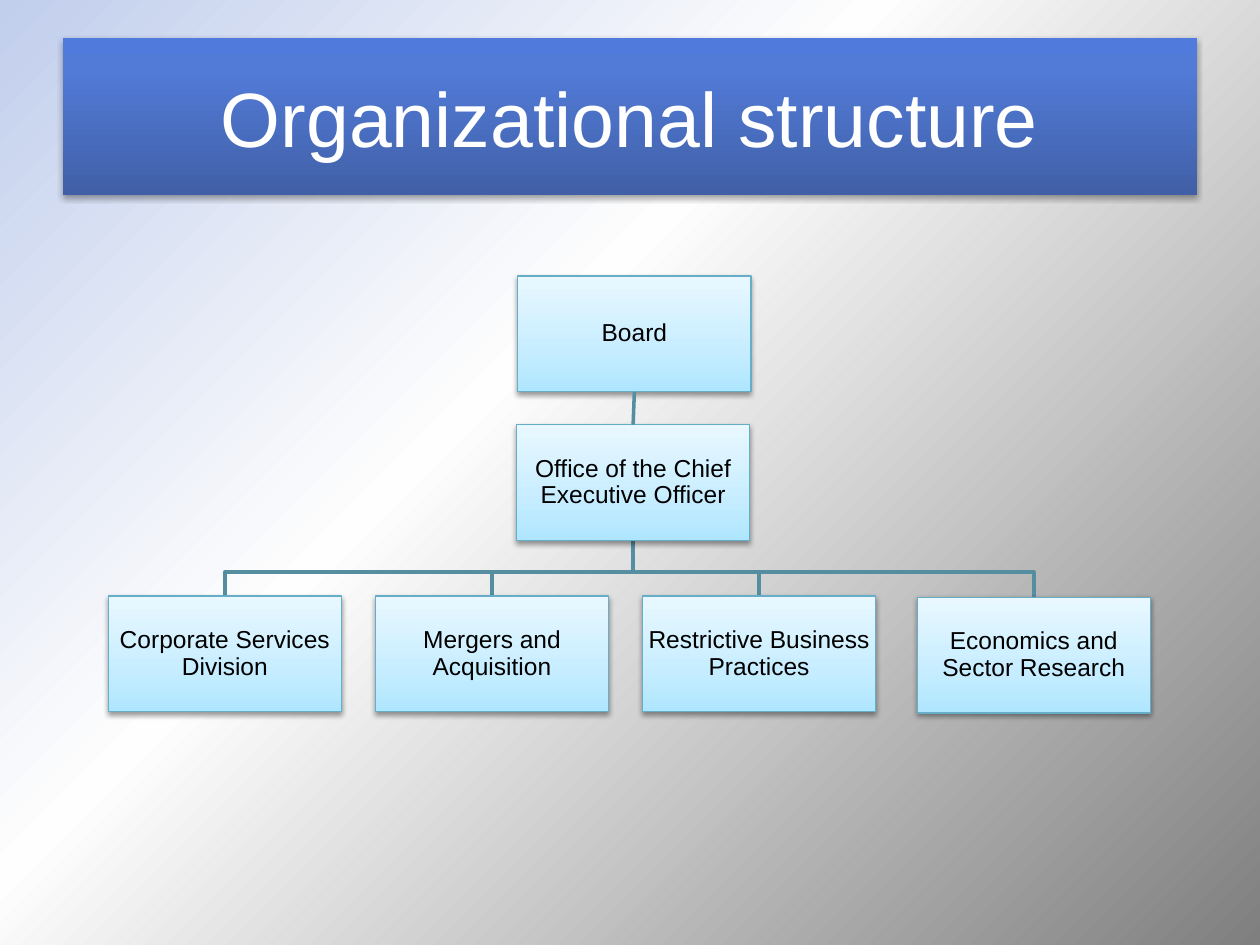
from dataclasses import dataclass

from lxml import etree
from pptx import Presentation
from pptx import util as u
from pptx.dml.color import RGBColor
from pptx.enum import shapes, text
from pptx.oxml import parse_xml
from pptx.oxml.ns import nsdecls, qn


@dataclass(frozen=True)
class Theme:
    font: str = "Arial"
    head: int = 44
    body: int = 14
    white: str = "FFFFFF"
    ink: str = "000000"
    edge: str = "66AEC7"
    link: str = "568EA1"
    page: tuple = ((0, "C1CEEC"), (40, "FEFEFE"), (100, "7F7F7F"))
    banner: tuple = ((0, "405FA6"), (80, "527BD8"), (100, "507ADC"))
    card: tuple = ((0, "AEE6FF"), (35, "C6EDFF"), (100, "E9F8FF"))


T = Theme()
WIDE, HIGH = 1.85, 0.92
LEFT, STEP = 0.86, 2.12
ROWS = 2.19, 3.37, 4.73
BUS = 4.54
BOARD = "Board", 4.11, ROWS[0]
CHIEF = "Office of the Chief Executive Officer", 4.1, ROWS[1]
UNITS = ("Corporate Services Division", "Mergers and Acquisition",
         "Restrictive Business Practices", "Economics and Sector Research")
NUDGE = {3: (0.06, 0.01)}  # the last unit sits slightly off the grid


def assign(obj, **vals):
    for key, val in vals.items():
        setattr(obj, key, val)


def blend(fill, root, stops, angle):
    """Fill with a gradient; the angle runs clockwise in degrees."""
    fill.solid()
    marks = "".join(
        f'<a:gs pos="{at * 1000}"><a:srgbClr val="{hue}"/></a:gs>'
        for at, hue in stops)
    grad = parse_xml(
        f'<a:gradFill {nsdecls("a")} rotWithShape="1"><a:gsLst>{marks}</a:gsLst>'
        f'<a:lin ang="{angle * 60000}" scaled="0"/></a:gradFill>')
    root.replace(root.find(qn("a:solidFill")), grad)


def shade(shape, alpha, drop):
    """Cast a soft shadow straight down by drop points."""
    shape.shadow.inherit = False
    shape.element.spPr.find(qn("a:effectLst")).append(parse_xml(
        f'<a:outerShdw {nsdecls("a")} blurRad="{u.Pt(3.1)}" dist="{u.Pt(drop)}" '
        f'dir="5400000" rotWithShape="0"><a:srgbClr val="{T.ink}">'
        f'<a:alpha val="{alpha * 1000}"/></a:srgbClr></a:outerShdw>'))


def stroke(line, hue, width):
    line.color.rgb = RGBColor.from_string(hue)
    line.width = u.Pt(width)


def write(shape, words, size, hue):
    frame = shape.text_frame
    assign(frame, text=words, word_wrap=True,
           vertical_anchor=text.MSO_ANCHOR.MIDDLE)
    para = frame.paragraphs[0]
    para.alignment = text.PP_ALIGN.CENTER
    assign(para.runs[0].font, name=T.font, size=u.Pt(size))
    para.runs[0].font.color.rgb = RGBColor.from_string(hue)
    return frame


def add_title(slide, words):
    title = slide.shapes.title
    assign(title, left=u.Inches(0.5), top=u.Inches(0.3),
           width=u.Inches(9), height=u.Inches(1.25))
    blend(title.fill, title.element.spPr, T.banner, 270)
    shade(title, 35, 1.8)
    write(title, words, T.head, T.white)


def add_card(slide, words, left, top):
    card = slide.shapes.add_shape(
        shapes.MSO_SHAPE.RECTANGLE, *map(u.Inches, (left, top, WIDE, HIGH)))
    blend(card.fill, card.element.spPr, T.card, 270)
    stroke(card.line, T.edge, 0.75)
    shade(card, 38, 1.6)
    frame = write(card, words, T.body, T.ink)
    sides = ("left", "right", "top", "bottom")
    assign(frame, **{f"margin_{side}": u.Inches(0.01) for side in sides})
    frame.paragraphs[0].line_spacing = 0.9
    return card


def add_branch(slide, left, top):
    """Draw the bent line from the chief's card down to a unit's card."""
    start = CHIEF[1] + WIDE / 2
    end = left + WIDE / 2
    points = [(start, CHIEF[2] + HIGH), (start, BUS), (end, BUS), (end, top)]
    points = [tuple(map(u.Inches, point)) for point in points]
    build = slide.shapes.build_freeform(*points[0])
    build.add_line_segments(points[1:], close=False)
    branch = build.convert_to_shape()
    branch.fill.background()
    branch.shadow.inherit = False
    stroke(branch.line, T.link, 2)


def add_link(slide, upper, lower):
    link = slide.shapes.add_connector(
        shapes.MSO_CONNECTOR.STRAIGHT, 0, 0, 0, 0)
    link.begin_connect(upper, 2)
    link.end_connect(lower, 0)
    stroke(link.line, T.link, 2)
    etree.SubElement(link.element.spPr, qn("a:effectLst"))


def place(col):
    dx, dy = NUDGE.get(col, (0, 0))
    return LEFT + col * STEP + dx, ROWS[2] + dy


def main():
    deck = Presentation()
    assign(deck, slide_width=u.Inches(10), slide_height=u.Inches(7.5))
    slide = deck.slides.add_slide(deck.slide_layouts[5])
    fill = slide.background.fill
    fill.solid()
    blend(fill, slide.element.find(".//" + qn("p:bgPr")), T.page, 45)
    add_title(slide, "Organizational structure")
    spots = [place(col) for col in range(len(UNITS))]
    for spot in spots:
        add_branch(slide, *spot)
    chief = add_card(slide, *CHIEF)
    for words, spot in zip(UNITS, spots):
        add_card(slide, words, *spot)
    add_link(slide, add_card(slide, *BOARD), chief)
    deck.save("out.pptx")


if __name__ == "__main__":
    main()
